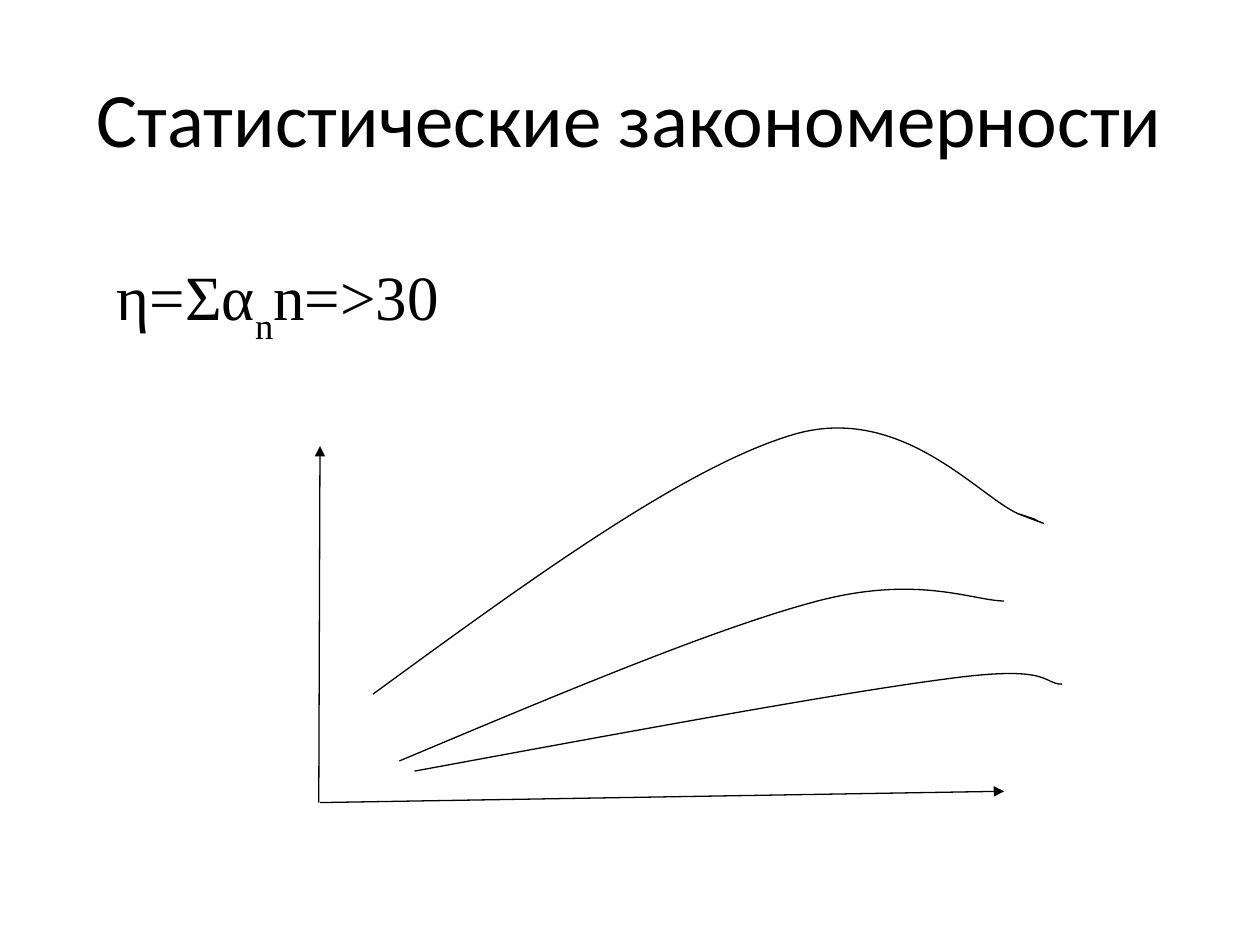
from lxml.etree import SubElement
from pptx import Presentation
from pptx.dml.color import RGBColor
from pptx.enum.shapes import MSO_CONNECTOR
from pptx.enum.text import MSO_ANCHOR as Anchor, PP_ALIGN as Align
from pptx.oxml.ns import qn
from pptx.util import Inches, Pt

BLACK = RGBColor(0, 0, 0)

# Each curve: a start point, then two control points and an end point per Bézier segment
CURVES = [
    [(3.17, 6.04), (4.43, 5.51), (5.69, 4.98), (6.49, 4.77),
     (7.29, 4.56), (7.73, 4.77), (7.97, 4.77)],
    [(3.29, 6.12), (4.97, 5.81), (6.65, 5.5), (7.5, 5.39),
     (8.36, 5.27), (8.27, 5.43), (8.43, 5.43)],
    [(2.96, 5.51), (4.22, 4.59), (5.47, 3.68), (6.33, 3.44),
     (7.19, 3.21), (7.8, 3.98), (8.11, 4.09),
     (8.43, 4.21), (8.21, 4.13), (8.21, 4.12),
     (8.21, 4.12), (8.15, 4.1), (8.09, 4.08)],
]
AXES = [((2.53, 6.37), (2.54, 3.54)), ((2.54, 6.37), (7.97, 6.28))]


def add_text(box, runs, font_name, size, alignment):
    """Put one paragraph in a new text box; runs are (text, baseline percent)."""
    textbox = slide.shapes.add_textbox(*map(Inches, box))
    frame = textbox.text_frame
    frame.word_wrap = True
    frame.vertical_anchor = Anchor.MIDDLE
    paragraph = frame.paragraphs[0]
    paragraph.alignment = alignment
    for text, baseline in runs:
        run = paragraph.add_run()
        run.text = text
        run.font.name = font_name
        run.font.size = Pt(size)
        run.font.color.rgb = BLACK
        if baseline:
            run.font._element.set("baseline", str(baseline * 1000))


def add_curve(points):
    """Draw a chain of cubic Bézier segments through every third point."""
    start, *rest = [(Inches(x), Inches(y)) for x, y in points]
    builder = graph.shapes.build_freeform(*start)
    builder.add_line_segments(rest, close=False)
    curve = builder.convert_to_shape()
    curve.shadow.inherit = False
    curve.fill.background()
    curve.line.color.rgb = BLACK
    curve.line.width = Pt(0.75)
    outline = curve._element.find(".//" + qn("a:path"))
    segments = outline.findall(qn("a:lnTo"))
    for i in range(0, len(segments), 3):
        bezier = SubElement(outline, qn("a:cubicBezTo"))
        for segment in segments[i:i + 3]:
            bezier.append(segment[0])
            outline.remove(segment)


presentation = Presentation()
presentation.slide_width = Inches(10)
presentation.slide_height = Inches(7.5)
slide = presentation.slides.add_slide(presentation.slide_layouts[6])

add_text((0.5, 0.3, 9, 1.25), [("Статистические закономерности", 0)],
         "Calibri", 44, Align.CENTER)

graph = slide.shapes.add_group_shape()
for start, end in AXES:
    axis = graph.shapes.add_connector(
        MSO_CONNECTOR.STRAIGHT, *map(Inches, start + end))
    axis.line.color.rgb = BLACK
    axis.line.width = Pt(0.75)
    SubElement(axis.line._get_or_add_ln(), qn("a:tailEnd"), type="triangle")
    SubElement(axis._element.spPr, qn("a:effectLst"))

for points in CURVES:
    add_curve(points)

add_text((0.83, 2.04, 8.66, 0.71), [("η=Σα", 0), ("n", -30), ("n=>30", 0)],
         "Times New Roman", 36, Align.LEFT)

presentation.save("out.pptx")
